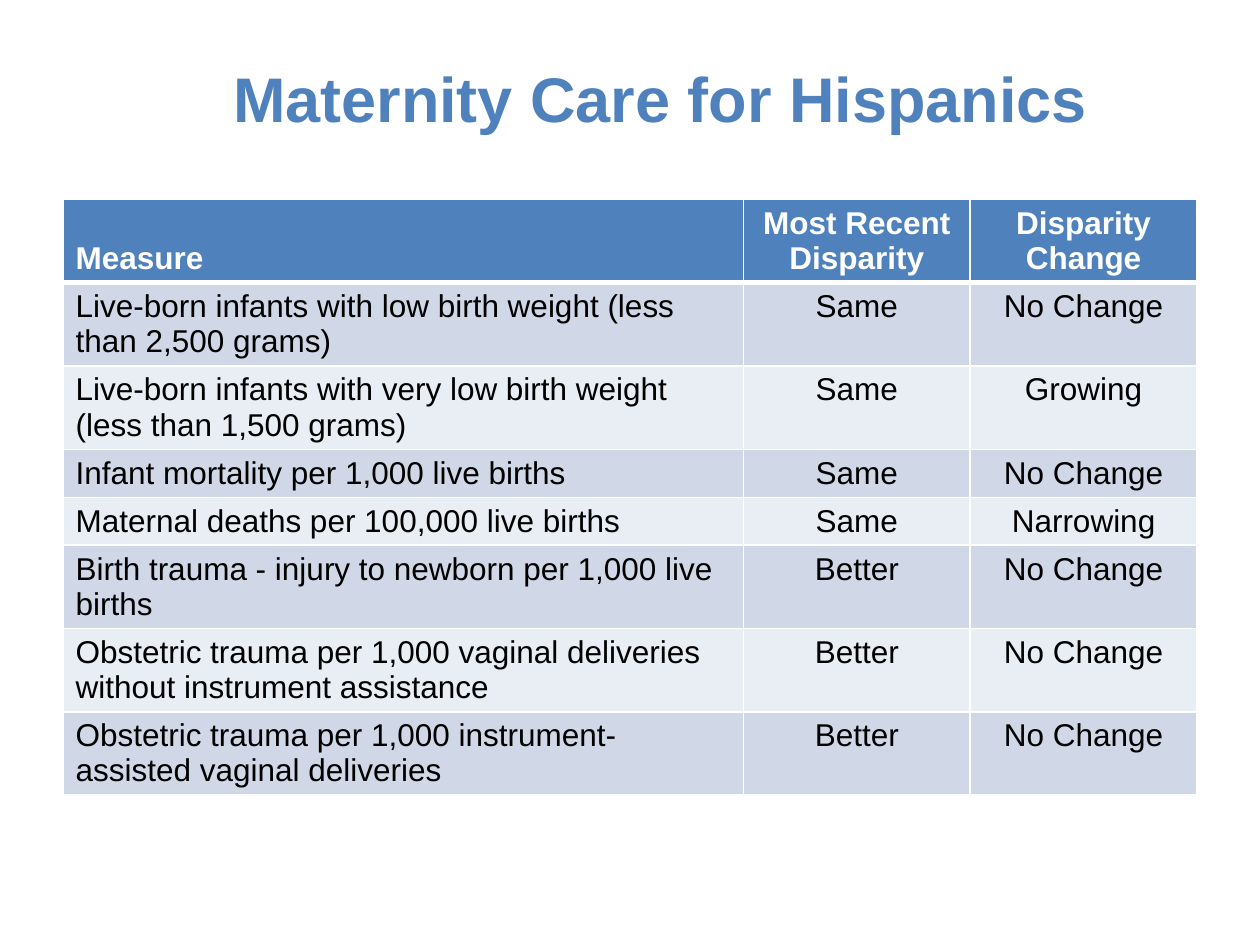
import pptx
import pptx.dml.color
import pptx.enum.text
import pptx.util
from lxml import etree
from pptx.oxml.ns import qn

Pt = pptx.util.Pt
RGB = pptx.dml.color.RGBColor
ALIGN = pptx.enum.text.PP_ALIGN
ANCHOR = pptx.enum.text.MSO_ANCHOR

BLUE = RGB(0x4F, 0x81, 0xBD)
WHITE = RGB(0xFF, 0xFF, 0xFF)
BLACK = RGB(0x00, 0x00, 0x00)
BANDS = (RGB(0xD0, 0xD8, 0xE8), RGB(0xE9, 0xED, 0xF4))

SHARES = (0.6, 0.2, 0.2)
HIGH, LOW = 47.6, 27.4
ROWS = (
    (HIGH, "Measure", "Most Recent Disparity", "Disparity Change"),
    (HIGH, "Live-born infants with low birth weight (less than 2,500 grams)",
     "Same", "No Change"),
    (HIGH, "Live-born infants with very low birth weight (less than 1,500 grams)",
     "Same", "Growing"),
    (LOW, "Infant mortality per 1,000 live births", "Same", "No Change"),
    (LOW, "Maternal deaths per 100,000 live births", "Same", "Narrowing"),
    (HIGH, "Birth trauma - injury to newborn per 1,000 live births",
     "Better", "No Change"),
    (HIGH, "Obstetric trauma per 1,000 vaginal deliveries without instrument assistance",
     "Better", "No Change"),
    (HIGH, "Obstetric trauma per 1,000 instrument-assisted vaginal deliveries",
     "Better", "No Change"),
)


def write(frame, text, size, color, bold, align):
    para = frame.paragraphs[0]
    para.alignment = align
    run = para.add_run()
    run.text = text
    run.font.name = "Arial"
    run.font.size = Pt(size)
    run.font.bold = bold
    run.font.color.rgb = color


def border(cell, widths):
    """Draw white lines on the sides named in widths."""
    props = cell._tc.get_or_add_tcPr()
    for side, width in widths.items():
        line = etree.SubElement(props, qn("a:ln" + side), w=str(Pt(width)))
        fill = etree.SubElement(line, qn("a:solidFill"))
        etree.SubElement(fill, qn("a:srgbClr"), val=str(WHITE))


def add_title(slide, left, top, width, height):
    title = slide.shapes.title
    title.left, title.top = Pt(left), Pt(top)
    title.width, title.height = Pt(width), Pt(height)
    frame = title.text_frame
    frame.word_wrap = True
    frame.vertical_anchor = ANCHOR.MIDDLE
    write(frame, "Maternity Care for Hispanics", 36, BLUE, True, ALIGN.LEFT)


def add_grid(slide, left, top, width):
    height = sum(row[0] for row in ROWS)
    table = slide.shapes.add_table(
        len(ROWS), len(SHARES), Pt(left), Pt(top), Pt(width), Pt(height)).table
    for col, share in zip(table.columns, SHARES):
        col.width = Pt(width * share)
    for r, (tall, *texts) in enumerate(ROWS):
        head = r == 0
        table.rows[r].height = Pt(tall)
        for c, text in enumerate(texts):
            cell = table.cell(r, c)
            border(cell, {"L": 1, "R": 1, "T": 3 if r == 1 else 1,
                          "B": 3 if head else 1})
            cell.fill.solid()
            cell.fill.fore_color.rgb = BLUE if head else BANDS[(r - 1) % 2]
            cell.vertical_anchor = ANCHOR.BOTTOM if head and c == 0 else ANCHOR.TOP
            write(cell.text_frame, text, 18, WHITE if head else BLACK, head,
                  ALIGN.CENTER if c else ALIGN.LEFT)


def main():
    deck = pptx.Presentation()
    deck.slide_width, deck.slide_height = Pt(720), Pt(540)
    slide = deck.slides.add_slide(deck.slide_layouts[5])
    add_title(slide, 126, 21.6, 558, 68.4)
    add_grid(slide, 36, 114, 648)
    deck.save("out.pptx")


if __name__ == "__main__":
    main()
